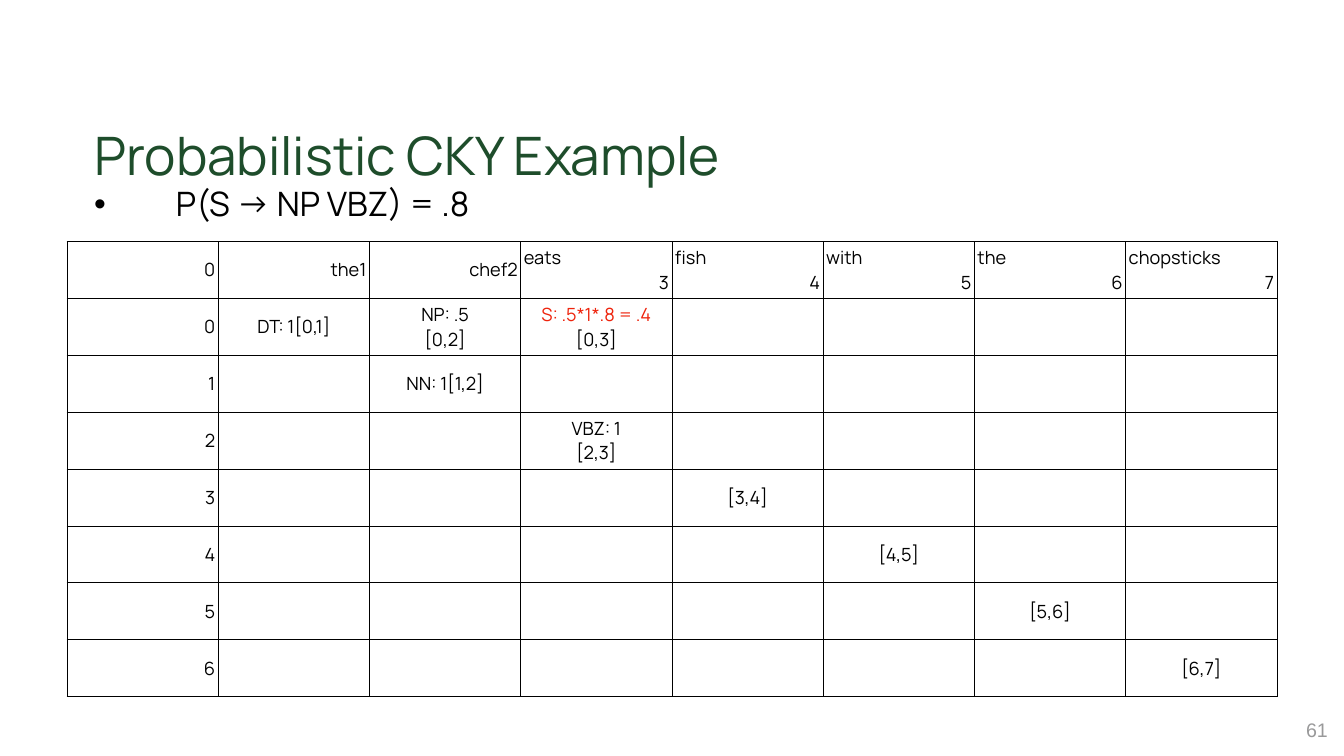
import pptx
import pptx.util
import pptx.oxml
import pptx.dml.color
import pptx.enum.text
from pptx.util import Inches

# Content
TITLE = "Probabilistic CKY Example"
RULE = "P(S → NP VBZ) = .8"
PAGE = "61"
WORDS = ["the", "chef", "eats", "fish", "with", "the", "chopsticks"]
STACK = 3  # from this word on, the index stands on its own line
SPANS = {  # (start, end): lines of the cell
    (0, 1): ["DT: 1[0,1]"],
    (0, 2): ["NP: .5", "[0,2]"],
    (0, 3): ["S: .5*1*.8 = .4", "[0,3]"],
    (1, 2): ["NN: 1[1,2]"],
    (2, 3): ["VBZ: 1", "[2,3]"],
    (3, 4): ["[3,4]"],
    (4, 5): ["[4,5]"],
    (5, 6): ["[5,6]"],
    (6, 7): ["[6,7]"],
}
FRESH = (0, 3)  # the span whose first line is highlighted

THEME = {
    "font": "Manrope", "plain": "Arial",
    "green": "1E4D2B", "black": "000000", "red": "EE230C", "gray": "99999A",
    "title": 75.7, "body": 48, "cell": 26, "page": 28,
}
ALIGN = pptx.enum.text.PP_ALIGN
ANCHOR = pptx.enum.text.MSO_ANCHOR
NS = 'xmlns:a="http://schemas.openxmlformats.org/drawingml/2006/main"'


def style(para, size, color="black", font="font", align=ALIGN.LEFT):
    para.alignment = align
    for run in para.runs:
        run.font.name = THEME[font]
        run.font.size = pptx.util.Pt(THEME[size])
        run.font.color.rgb = pptx.dml.color.RGBColor.from_string(THEME[color])


def place(shape, box, inset, anchor=ANCHOR.TOP, wrap=True):
    shape.left, shape.top, shape.width, shape.height = map(Inches, box)
    frame = shape.text_frame
    frame.margin_left = frame.margin_right = Inches(inset)
    frame.margin_top = frame.margin_bottom = Inches(inset)
    frame.auto_size = pptx.enum.text.MSO_AUTO_SIZE.NONE
    frame.vertical_anchor = anchor
    frame.word_wrap = wrap
    return frame


def border(cell):
    props = cell._tc.get_or_add_tcPr()
    for side in "LRTB":
        props.append(pptx.oxml.parse_xml(
            f'<a:ln{side} {NS} w="12700"><a:solidFill>'
            f'<a:srgbClr val="{THEME["black"]}"/></a:solidFill></a:ln{side}>'))


def entry(row, col):
    """Lines of a cell, each as text, alignment and colour."""
    if col == 0:
        return [(str(max(row - 1, 0)), ALIGN.RIGHT, "black")]
    if row == 0:
        word = WORDS[col - 1]
        if col < STACK:
            return [(f"{word}{col}", ALIGN.RIGHT, "black")]
        return [(word, ALIGN.LEFT, "black"), (str(col), ALIGN.RIGHT, "black")]
    span = (row - 1, col)
    return [(text, ALIGN.CENTER, "red" if span == FRESH and i == 0 else "black")
            for i, text in enumerate(SPANS.get(span, []))]


deck = pptx.Presentation()
deck.slide_width, deck.slide_height = Inches(26.67), Inches(15)
slide = deck.slides.add_slide(deck.slide_layouts[1])

# Title
frame = place(slide.shapes.title, (1.77, 2.34, 23.92, 1.68), 0.1)
frame.text = TITLE
style(frame.paragraphs[0], "title", "green")

# Grammar rule
frame = place(slide.placeholders[1], (1.77, 3.62, 23.92, 7.78), 0.1)
frame.text = RULE
para = frame.paragraphs[0]
props = para._p.get_or_add_pPr()
props.set("marL", str(Inches(1.62)))
props.set("indent", str(-Inches(1.62)))
props.append(pptx.oxml.parse_xml(f'<a:buChar {NS} char="•"/>'))
para.line_spacing = 0.9
para.space_before = pptx.util.Pt(0)
style(para, "body")

# Page number
frame = place(slide.shapes.add_textbox(0, 0, 0, 0), (25.85, 14.22, 0.55, 0.53),
              0.05, ANCHOR.MIDDLE, False)
frame.text = PAGE
style(frame.paragraphs[0], "page", "gray", "plain", ALIGN.RIGHT)

# Chart of spans
count = len(WORDS) + 1
table = slide.shapes.add_table(count, count, Inches(1.33), Inches(4.79),
                               Inches(24.01), Inches(9.03)).table
table.first_row = table.horz_banding = False
for row in range(count):
    for col in range(count):
        cell = table.cell(row, col)
        cell.margin_left = cell.margin_right = Inches(0.06)
        cell.margin_top = cell.margin_bottom = Inches(0.06)
        cell.vertical_anchor = ANCHOR.MIDDLE
        border(cell)
        cell.fill.background()
        lines = entry(row, col)
        cell.text_frame.text = "\n".join(text for text, _, _ in lines)
        for para, (_, align, color) in zip(cell.text_frame.paragraphs, lines):
            style(para, "cell", color, align=align)

deck.save("out.pptx")
